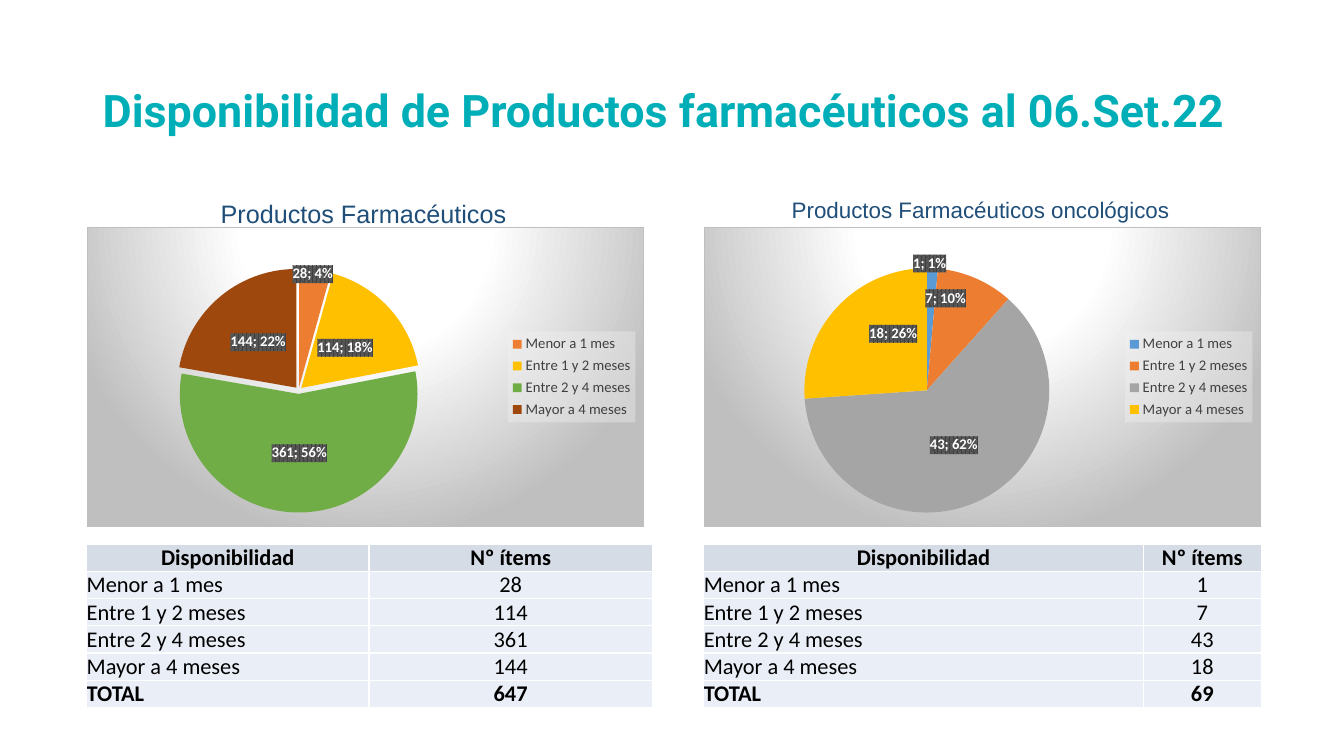
from lxml import etree
from pptx import Presentation
from pptx.chart.data import CategoryChartData
from pptx.dml.color import RGBColor
from pptx.enum import chart as chart_enum, text
from pptx.oxml import parse_xml
from pptx.oxml.ns import nsdecls, qn
from pptx.util import Inches, Pt

TEAL = RGBColor(0x00, 0xAE, 0xB8)
NAVY = RGBColor(0x1F, 0x4E, 0x79)
BLACK = RGBColor(0x00, 0x00, 0x00)
CHARCOAL = RGBColor(0x40, 0x40, 0x40)
HEADER_FILL = RGBColor(0xD6, 0xDC, 0xE5)
BODY_FILL = RGBColor(0xEA, 0xEF, 0xF7)
BLUE = RGBColor(0x5B, 0x9B, 0xD5)
ORANGE = RGBColor(0xED, 0x7D, 0x31)
GRAY = RGBColor(0xA5, 0xA5, 0xA5)
GOLD = RGBColor(0xFF, 0xC0, 0x00)
GREEN = RGBColor(0x70, 0xAD, 0x47)
BROWN = RGBColor(0x9E, 0x48, 0x0E)

CATEGORIES = ["Menor a 1 mes", "Entre 1 y 2 meses", "Entre 2 y 4 meses", "Mayor a 4 meses"]
NAMESPACES = nsdecls("c", "a")

CHART_FRAME = f"""<c:spPr {NAMESPACES}><a:gradFill><a:gsLst>
<a:gs pos="0"><a:srgbClr val="FFFFFF"/></a:gs><a:gs pos="39000"><a:srgbClr val="FFFFFF"/></a:gs>
<a:gs pos="100000"><a:srgbClr val="BFBFBF"/></a:gs></a:gsLst>
<a:path path="circle"><a:fillToRect l="50000" t="-80000" r="50000" b="180000"/></a:path></a:gradFill>
<a:ln w="9525"><a:solidFill><a:srgbClr val="BFBFBF"/></a:solidFill></a:ln></c:spPr>"""

LEGEND_FILL = f"""<c:spPr {NAMESPACES}><a:solidFill><a:srgbClr val="F2F2F2">
<a:alpha val="39000"/></a:srgbClr></a:solidFill></c:spPr>"""

LABEL_STYLE = """<c:spPr><a:pattFill prst="pct75"><a:fgClr><a:srgbClr val="404040"/></a:fgClr>
<a:bgClr><a:srgbClr val="595959"/></a:bgClr></a:pattFill></c:spPr>
<c:txPr><a:bodyPr/><a:p><a:pPr><a:defRPr sz="1050" b="1"><a:solidFill><a:srgbClr val="FFFFFF"/>
</a:solidFill><a:latin typeface="Calibri"/></a:defRPr></a:pPr></a:p></c:txPr>
<c:dLblPos val="ctr"/><c:showLegendKey val="0"/><c:showVal val="1"/><c:showCatName val="0"/>
<c:showSerName val="0"/><c:showPercent val="1"/><c:showBubbleSize val="0"/>
<c:separator>; </c:separator>"""


def layout_xml(target="", **places):
    """Return a manual chart layout with the given fractions."""
    inner = f'<c:layoutTarget val="{target}"/>' if target else ""
    modes = '<c:xMode val="edge"/><c:yMode val="edge"/>' if target else ""
    values = "".join(f'<c:{key} val="{value}"/>' for key, value in places.items())
    return f"<c:layout {NAMESPACES}><c:manualLayout>{inner}{modes}{values}</c:manualLayout></c:layout>"


def add_text(page, box, words, font, size, color, bold=False, align=text.PP_ALIGN.CENTER,
             spacing=1.07, anchor=text.MSO_ANCHOR.TOP):
    """Add a one-paragraph text box."""
    frame = page.shapes.add_textbox(*map(Inches, box)).text_frame
    frame.word_wrap = True
    frame.vertical_anchor = anchor
    para = frame.paragraphs[0]
    para.text = words
    para.alignment = align
    para.line_spacing = spacing
    span = para.runs[0].font
    span.name, span.size, span.bold = font, Pt(size), bold
    span.color.rgb = color


def add_pie(page, box, values, colors, plot_left, offsets, explosion):
    """Add a pie with value and percent labels on a shaded frame."""
    data = CategoryChartData()
    data.categories = CATEGORIES
    data.add_series("Series 1", values)
    chart = page.shapes.add_chart(chart_enum.XL_CHART_TYPE.PIE, *map(Inches, box), data).chart
    chart.has_title = False
    chart.font.name, chart.font.size = "Calibri", Pt(10.5)
    chart.font.color.rgb = BLACK
    chart.has_legend = True
    legend = chart.legend
    legend.position = chart_enum.XL_LEGEND_POSITION.RIGHT
    legend.include_in_layout = False
    legend.font.name, legend.font.size = "Calibri", Pt(10.5)
    legend.font.color.rgb = CHARCOAL
    plot = chart.plots[0]
    plot.vary_by_categories = True
    for index, color in enumerate(colors):
        fill = plot.series[0].points[index].format.fill
        fill.solid()
        fill.fore_color.rgb = color

    root = chart.element
    root.find(qn("c:chart")).addnext(parse_xml(CHART_FRAME))
    root.find(".//" + qn("c:legend")).find(qn("c:txPr")).addprevious(parse_xml(LEGEND_FILL))
    area = root.find(".//" + qn("c:plotArea"))
    for old in area.findall(qn("c:layout")):
        area.remove(old)
    area.insert(0, parse_xml(layout_xml("inner", x=plot_left, y=0.13, w=0.44, h=0.83)))
    series = area.find(".//" + qn("c:ser"))
    if explosion:
        burst = etree.Element(qn("c:explosion"), val=str(explosion))
        series.find(qn("c:dPt")).addprevious(burst)
    moved = "".join(f'<c:dLbl><c:idx val="{index}"/>{layout_xml(x=x, y=y)}{LABEL_STYLE}</c:dLbl>'
                    for index, (x, y) in offsets.items())
    labels = f"<c:dLbls {NAMESPACES}>{moved}{LABEL_STYLE}</c:dLbls>"
    series.find(qn("c:cat")).addprevious(parse_xml(labels))


def style_cell(cell, words, fill, bold, centered):
    """Fill one table cell and give it white borders."""
    cell.text = words
    cell.margin_left = cell.margin_right = cell.margin_top = cell.margin_bottom = 0
    cell.vertical_anchor = text.MSO_ANCHOR.MIDDLE
    para = cell.text_frame.paragraphs[0]
    para.alignment = text.PP_ALIGN.CENTER if centered else text.PP_ALIGN.LEFT
    span = para.runs[0].font
    span.name, span.size, span.bold = "Calibri", Pt(16), bold
    span.color.rgb = BLACK
    properties = cell._tc.get_or_add_tcPr()
    for side in ("lnL", "lnR", "lnT", "lnB"):
        properties.append(parse_xml(f'<a:{side} {nsdecls("a")} w="12700"><a:solidFill>'
                                    f'<a:srgbClr val="FFFFFF"/></a:solidFill></a:{side}>'))
    cell.fill.solid()
    cell.fill.fore_color.rgb = fill


def add_stock_table(page, left, top, widths, values):
    """Add the table of item counts with its total."""
    rows = [("Disponibilidad", "Nº ítems"), *zip(CATEGORIES, map(str, values)),
            ("TOTAL", str(sum(values)))]
    row_height = 0.27
    table = page.shapes.add_table(len(rows), 2, Inches(left), Inches(top), Inches(sum(widths)),
                                  Inches(row_height * len(rows))).table
    for column, width in zip(table.columns, widths):
        column.width = Inches(width)
    for row, entries in enumerate(rows):
        table.rows[row].height = Inches(row_height)
        header = row == 0
        for column, words in enumerate(entries):
            style_cell(table.cell(row, column), words, HEADER_FILL if header else BODY_FILL,
                       header or row == len(rows) - 1, header or column == 1)


def add_panel(page, left, caption, caption_top, caption_size, values, widths, **pie):
    """Place a caption, a pie and its table in one column."""
    add_text(page, (left + 0.7, caption_top, 4.09, 0.4), caption, "Arial", caption_size, NAVY)
    add_pie(page, (left, 2.25, 5.53, 2.98), values, **pie)
    add_stock_table(page, left, 5.4, widths, values)


def main():
    """Build the availability slide."""
    deck = Presentation()
    deck.slide_width, deck.slide_height = Inches(13.33), Inches(7.5)
    page = deck.slides.add_slide(deck.slide_layouts[6])
    add_text(page, (0.92, 0.4, 11.5, 1.45), "Disponibilidad de Productos farmacéuticos al 06.Set.22",
             "Roboto", 32, TEAL, True, text.PP_ALIGN.LEFT, 0.9, text.MSO_ANCHOR.MIDDLE)
    add_panel(page, 0.86, "Productos Farmacéuticos", 1.9, 18, (28, 114, 361, 144), (2.8, 2.81),
              colors=(ORANGE, GOLD, GREEN, BROWN), plot_left=0.16,
              offsets={0: (0.01, -0.18)}, explosion=3)
    add_panel(page, 6.98, "Productos Farmacéuticos oncológicos", 1.88, 16, (1, 7, 43, 18), (4.36, 1.17),
              colors=(BLUE, ORANGE, GRAY, GOLD), plot_left=0.18,
              offsets={0: (0, -0.22), 1: (-0.01, -0.12), 3: (0.02, -0.05)}, explosion=0)
    deck.save("out.pptx")


if __name__ == "__main__":
    main()
